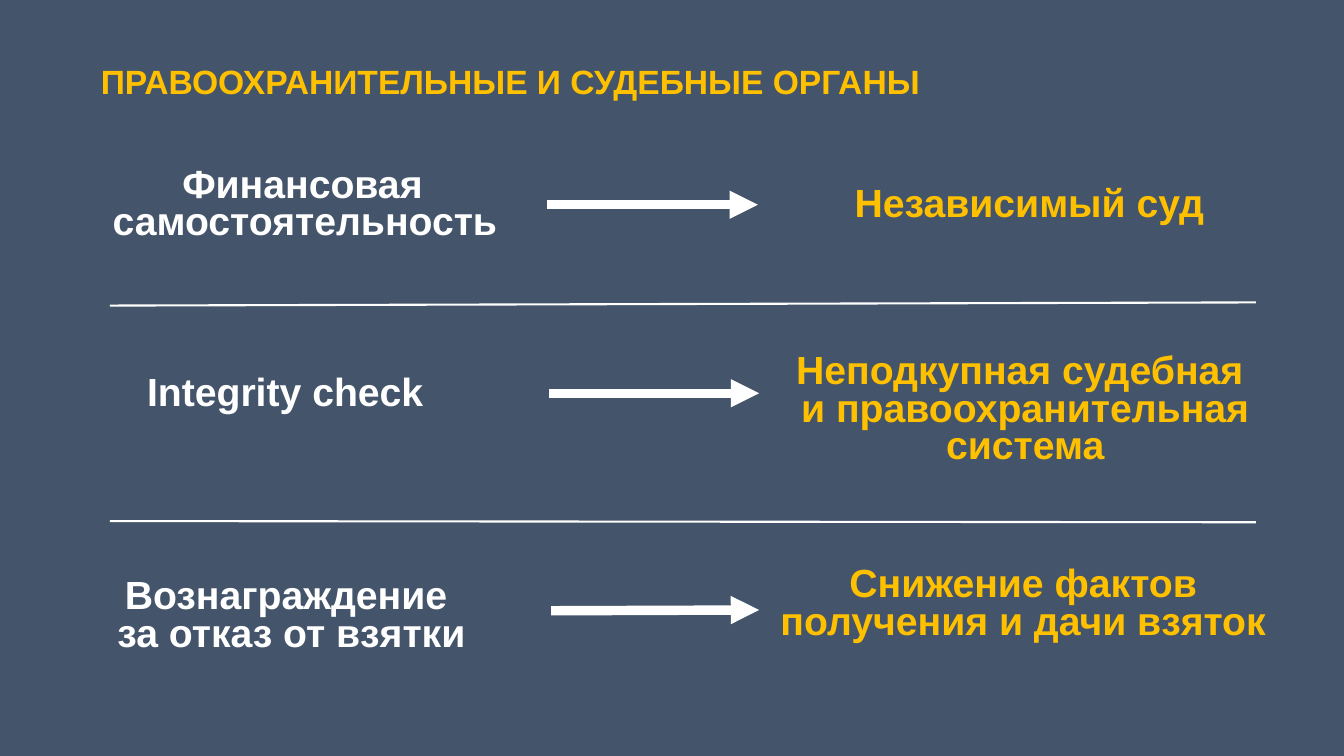
from lxml import etree
from pptx import Presentation
from pptx.dml.color import RGBColor
from pptx.enum.shapes import MSO_CONNECTOR, MSO_SHAPE
from pptx.enum.text import MSO_AUTO_SIZE, PP_ALIGN
from pptx.oxml.ns import qn
from pptx.util import Cm, Pt

SLATE = RGBColor(0x44, 0x54, 0x6A)
WHITE = RGBColor(0xFF, 0xFF, 0xFF)
GOLD = RGBColor(0xFF, 0xC0, 0x00)
FONT = "Arial"
LEFT, CENTER = PP_ALIGN.LEFT, PP_ALIGN.CENTER
GROW = MSO_AUTO_SIZE.SHAPE_TO_FIT_TEXT
STRAIGHT = MSO_CONNECTOR.STRAIGHT
RECTANGLE = MSO_SHAPE.RECTANGLE

SLIDE_W, SLIDE_H = 33.87, 19.05
ROW_LEFT = 1.12

# Row top, then parts relative to the row's corner, all in cm:
# text boxes are (x, y, width, height), arrows are (x1, y1, x2, y2)
ROWS = [
    {
        "top": 4.11,
        "cause": ["Финансовая ", "самостоятельность"],
        "cause_box": (1.47, 0, 10.34, 2.16),
        "cause_aligns": [CENTER, LEFT],
        "cause_wrap": False,
        "arrow": (12.67, 1.05, 17.98, 1.05),
        "effect": ["Независимый суд"],
        "effect_box": (18.84, 0.49, 11.96, 1.22),
    },
    {
        "top": 8.81,
        "cause": ["Integrity check "],
        "cause_box": (2.28, 0.54, 7.85, 1.22),
        "cause_aligns": [CENTER],
        "cause_wrap": False,
        "arrow": (12.72, 1.1, 18.01, 1.1),
        "effect": ["Неподкупная судебная ", "и правоохранительная система"],
        "effect_box": (18.29, 0, 12.85, 3.12),
    },
    {
        "top": 14.17,
        "cause": ["Вознаграждение ", "за отказ от взятки"],
        "cause_box": (0, 0.31, 12.45, 2.16),
        "cause_aligns": [CENTER, CENTER],
        "cause_wrap": True,
        "arrow": (12.77, 1.22, 18.01, 1.2),
        "effect": ["Снижение фактов получения и дачи взяток"],
        "effect_box": (18.29, 0, 12.75, 3.12),
    },
]
DIVIDERS = [(31.65, 7.62, 2.77, 7.7), (31.65, 13.16, 2.77, 13.13)]


def add_text(s, box, lines, color, aligns, size=28, wrap=True):
    tf = s.shapes.add_textbox(*(Cm(v) for v in box)).text_frame
    tf.word_wrap = wrap
    tf.auto_size = GROW
    tf.text = "\n".join(lines)
    for p, align in zip(tf.paragraphs, aligns):
        p.alignment = align
        p.line_spacing = 0.8
        font = p.runs[0].font
        font.name, font.size, font.bold = FONT, Pt(size), True
        font.color.rgb = color


def add_line(s, ends, width, arrow=False):
    line = s.shapes.add_connector(STRAIGHT, *(Cm(v) for v in ends))
    line.line.color.rgb = WHITE
    line.line.width = Pt(width)
    if arrow:
        etree.SubElement(line.line._get_or_add_ln(), qn("a:tailEnd"), type="triangle")
    etree.SubElement(line._element.spPr, qn("a:effectLst"))


def add_background(s, left, top, width, height):
    sp = s.shapes.add_shape(RECTANGLE, Cm(left), Cm(top), Cm(width), Cm(height))
    sp.shadow.inherit = False
    sp.fill.solid()
    sp.fill.fore_color.rgb = SLATE
    sp.line.fill.background()


def add_row(s, left, top, row):
    def place(x, y):
        return left + x, top + y

    # Cause on the left
    x, y, w, h = row["cause_box"]
    add_text(s, (*place(x, y), w, h), row["cause"], WHITE,
             row["cause_aligns"], wrap=row["cause_wrap"])
    # Arrow
    x1, y1, x2, y2 = row["arrow"]
    add_line(s, (*place(x1, y1), *place(x2, y2)), 6.75, arrow=True)
    # Effect on the right
    x, y, w, h = row["effect_box"]
    add_text(s, (*place(x, y), w, h), row["effect"], GOLD,
             [CENTER] * len(row["effect"]))


def main():
    prs = Presentation()
    prs.slide_width, prs.slide_height = Cm(SLIDE_W), Cm(SLIDE_H)
    s = prs.slides.add_slide(prs.slide_layouts[6])

    add_background(s, 0, 0, SLIDE_W, SLIDE_H)

    # Title
    add_text(s, (2.29, 1.6, 28.3, 1.07),
             ["ПРАВООХРАНИТЕЛЬНЫЕ И СУДЕБНЫЕ ОРГАНЫ"], GOLD, [LEFT], size=24)

    # Cause and effect rows with dividers between them
    for row in ROWS:
        add_row(s, ROW_LEFT, row["top"], row)
    for ends in DIVIDERS:
        add_line(s, ends, 1.5)

    prs.save("out.pptx")


if __name__ == "__main__":
    main()
